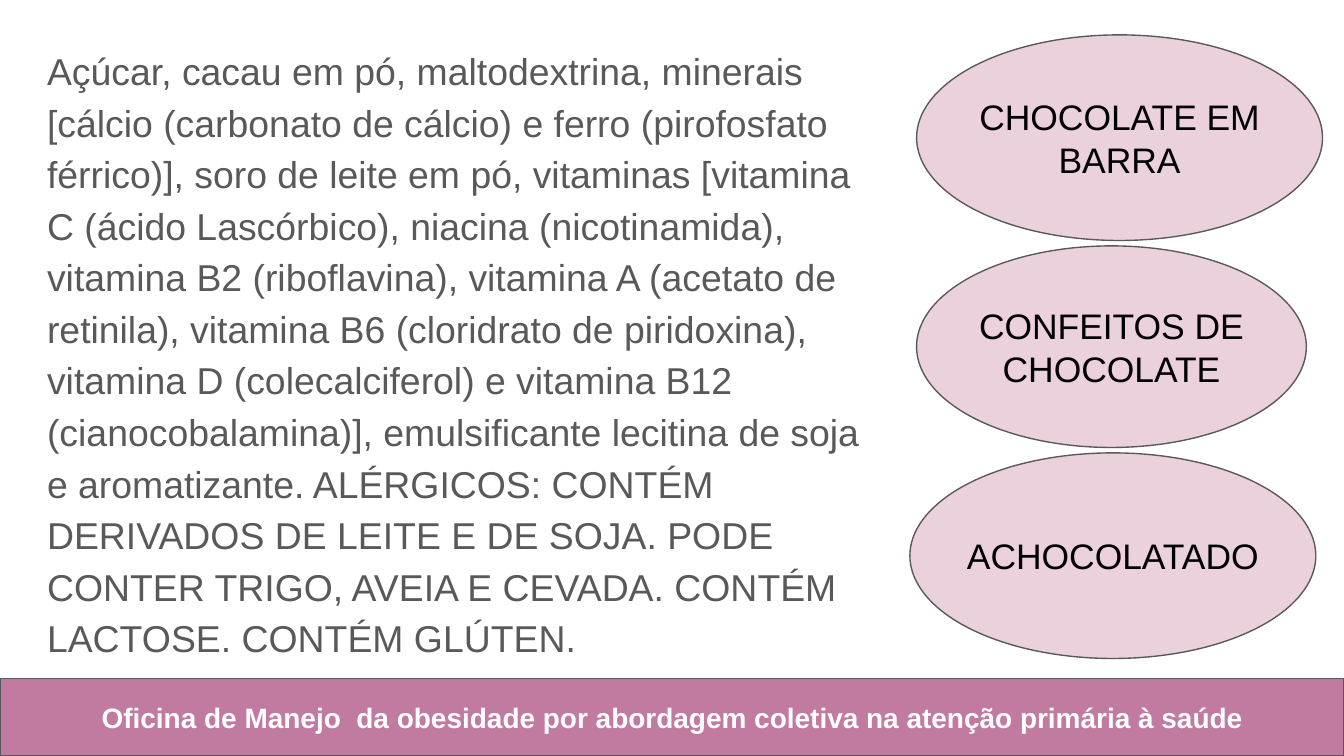
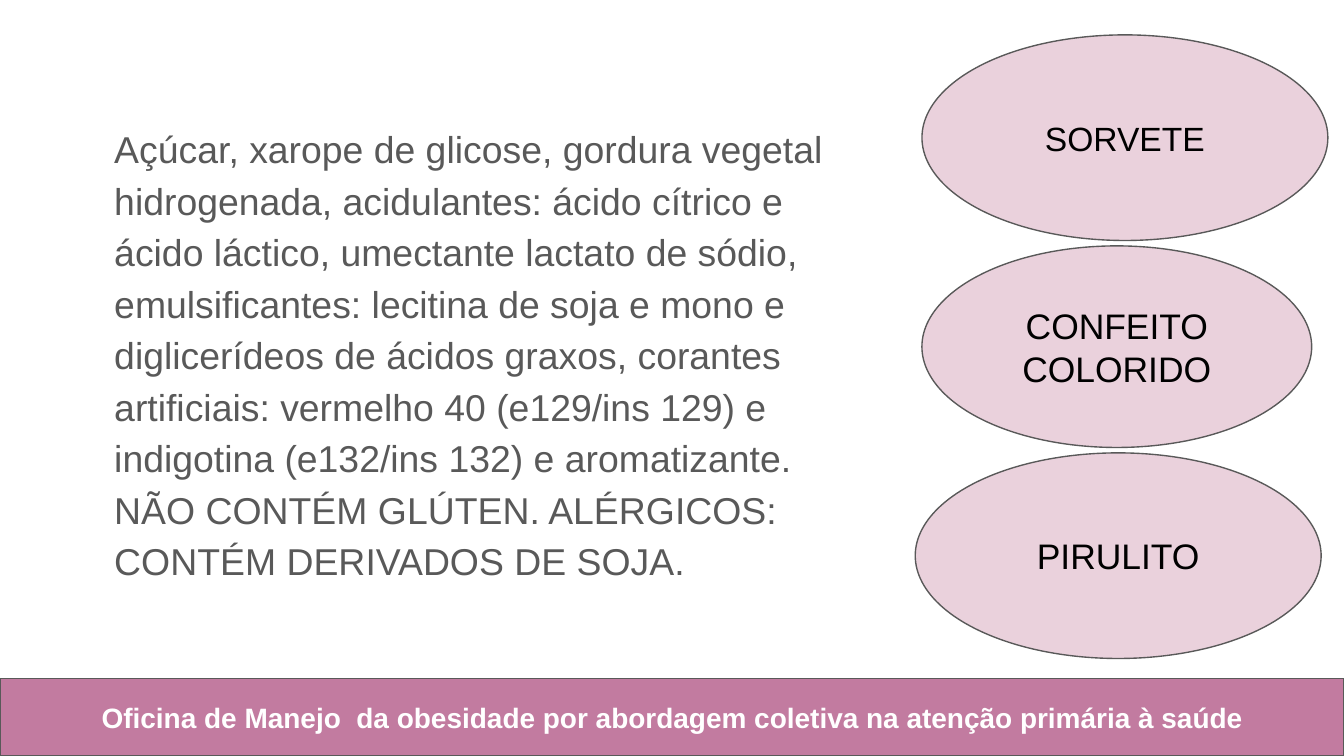
from lxml import etree
from pptx import Presentation
from pptx.dml.color import RGBColor
from pptx.enum.shapes import MSO_SHAPE
from pptx.enum.text import MSO_ANCHOR, MSO_AUTO_SIZE, PP_ALIGN
from pptx.oxml.ns import qn
from pptx.util import Inches, Pt

# Grid of square cells, 100 columns by 56.25 rows
CELL = 0.1
COLS, ROWS = 100, 56.25

# Shared look
FONT = "Arial"
ROSE = RGBColor(0xC2, 0x7B, 0xA0)
PINK = RGBColor(0xEA, 0xD1, 0xDC)
GRAY = RGBColor(0x59, 0x59, 0x59)
WHITE = RGBColor(0xFF, 0xFF, 0xFF)
BLACK = RGBColor(0, 0, 0)
RECT, OVAL = MSO_SHAPE.RECTANGLE, MSO_SHAPE.OVAL
LEFT, CENTER = PP_ALIGN.LEFT, PP_ALIGN.CENTER
TOP, MIDDLE = MSO_ANCHOR.TOP, MSO_ANCHOR.MIDDLE
NO_FIT = MSO_AUTO_SIZE.NONE

BAND_TOP = 50.5
BAND_TEXT = ("Oficina de Manejo  da obesidade por abordagem coletiva "
             "na atenção primária à saúde")

# Column of ovals: (shift from the column's left, width, height)
OVALS = [(0.5, 30.2, 15.3), (0.5, 29, 15), (0, 30.2, 15.3)]
OVAL_TOP, OVAL_GAP = 2.6, 0.4

# Slide content: body box, left of the ovals, body text, (label, size)
SLIDES = [
    ((2.5, 2.1, 63.5, 45.6), 67.7,
     "Açúcar, cacau em pó, maltodextrina, minerais [cálcio (carbonato de "
     "cálcio) e ferro (pirofosfato férrico)], soro de leite em pó, vitaminas "
     "[vitamina C (ácido Lascórbico), niacina (nicotinamida), vitamina B2 "
     "(riboflavina), vitamina A (acetato de retinila), vitamina B6 "
     "(cloridrato de piridoxina), vitamina D (colecalciferol) e vitamina B12 "
     "(cianocobalamina)], emulsificante lecitina de soja e aromatizante. "
     "ALÉRGICOS: CONTÉM DERIVADOS DE LEITE E DE SOJA. PODE CONTER TRIGO, "
     "AVEIA E CEVADA. CONTÉM LACTOSE. CONTÉM GLÚTEN.",
     [("CHOCOLATE EM BARRA", 19), ("CONFEITOS DE CHOCOLATE", 19),
      ("ACHOCOLATADO", 19)]),
    ((7.5, 7.9, 55.8, 35.9), 68.1,
     "Açúcar, xarope de glicose, gordura vegetal hidrogenada, acidulantes: "
     "ácido cítrico e ácido láctico, umectante lactato de sódio, "
     "emulsificantes: lecitina de soja e mono e diglicerídeos de ácidos "
     "graxos, corantes artificiais: vermelho 40 (e129/ins 129) e indigotina "
     "(e132/ins 132) e aromatizante. NÃO CONTÉM GLÚTEN. ALÉRGICOS: CONTÉM "
     "DERIVADOS DE SOJA.",
     [("SORVETE", 18), ("CONFEITO COLORIDO", 19), ("PIRULITO", 19)]),
]


def grid(*cells):
    return [Inches(n * CELL) for n in cells]


def write(frame, text, size, color, bold=False, align=CENTER, anchor=TOP,
          lines=1.0):
    frame.word_wrap = True
    frame.auto_size = NO_FIT
    frame.vertical_anchor = anchor
    frame.margin_left = frame.margin_right = Inches(0.1)
    frame.margin_top = frame.margin_bottom = Inches(0.1)
    para = frame.paragraphs[0]
    para.alignment = align
    para.line_spacing = lines
    para.space_before = Pt(0)
    run = para.add_run()
    run.text = text
    font = run.font
    font.name, font.size, font.bold = FONT, Pt(size), bold
    font.color.rgb = color


def add_form(shapes, kind, box, fill):
    form = shapes.add_shape(kind, *grid(*box))
    form.shadow.inherit = False
    form.fill.solid()
    form.fill.fore_color.rgb = fill
    form.line.color.rgb = GRAY
    form.line.width = Pt(0.75)


def add_label(shapes, box, text, size, color, **style):
    label = shapes.add_textbox(*grid(*box))
    write(label.text_frame, text, size, color, **style)


def add_band(slide):
    add_form(slide.shapes, RECT, (0, BAND_TOP, COLS, ROWS - BAND_TOP), ROSE)
    add_label(slide.shapes, (3.4, 51.1, 93.3, 4.5), BAND_TEXT, 15, WHITE,
              bold=True)


def fill_body(slide, box, text):
    body = slide.placeholders[1]
    body.left, body.top, body.width, body.height = grid(*box)
    write(body.text_frame, text, 20, GRAY, align=LEFT, lines=1.15)
    # Plain paragraph: no bullet, no hanging indent
    props = body.text_frame.paragraphs[0]._p.get_or_add_pPr()
    props.set("marL", "0")
    props.set("indent", "0")
    etree.SubElement(props, qn("a:buNone"))


def add_oval(slide, box, text, size):
    left, top, wide, high = box
    group = slide.shapes.add_group_shape()
    add_form(group.shapes, OVAL, box, PINK)
    # The label is centred and takes 81% by 50% of the oval
    inner = (left + wide * 0.095, top + high * 0.25, wide * 0.81, high * 0.5)
    add_label(group.shapes, inner, text, size, BLACK, anchor=MIDDLE)


def add_ovals(slide, left, labels):
    top = OVAL_TOP
    for (shift, wide, high), (text, size) in zip(OVALS, labels):
        add_oval(slide, (left + shift, top, wide, high), text, size)
        top += high + OVAL_GAP


def main():
    deck = Presentation()
    deck.slide_width, deck.slide_height = grid(COLS, ROWS)
    layout = deck.slide_layouts[1]
    for box, left, text, labels in SLIDES:
        slide = deck.slides.add_slide(layout)
        title = slide.shapes.title.element
        title.getparent().remove(title)
        add_band(slide)
        fill_body(slide, box, text)
        add_ovals(slide, left, labels)
    deck.save("out.pptx")


if __name__ == "__main__":
    main()
